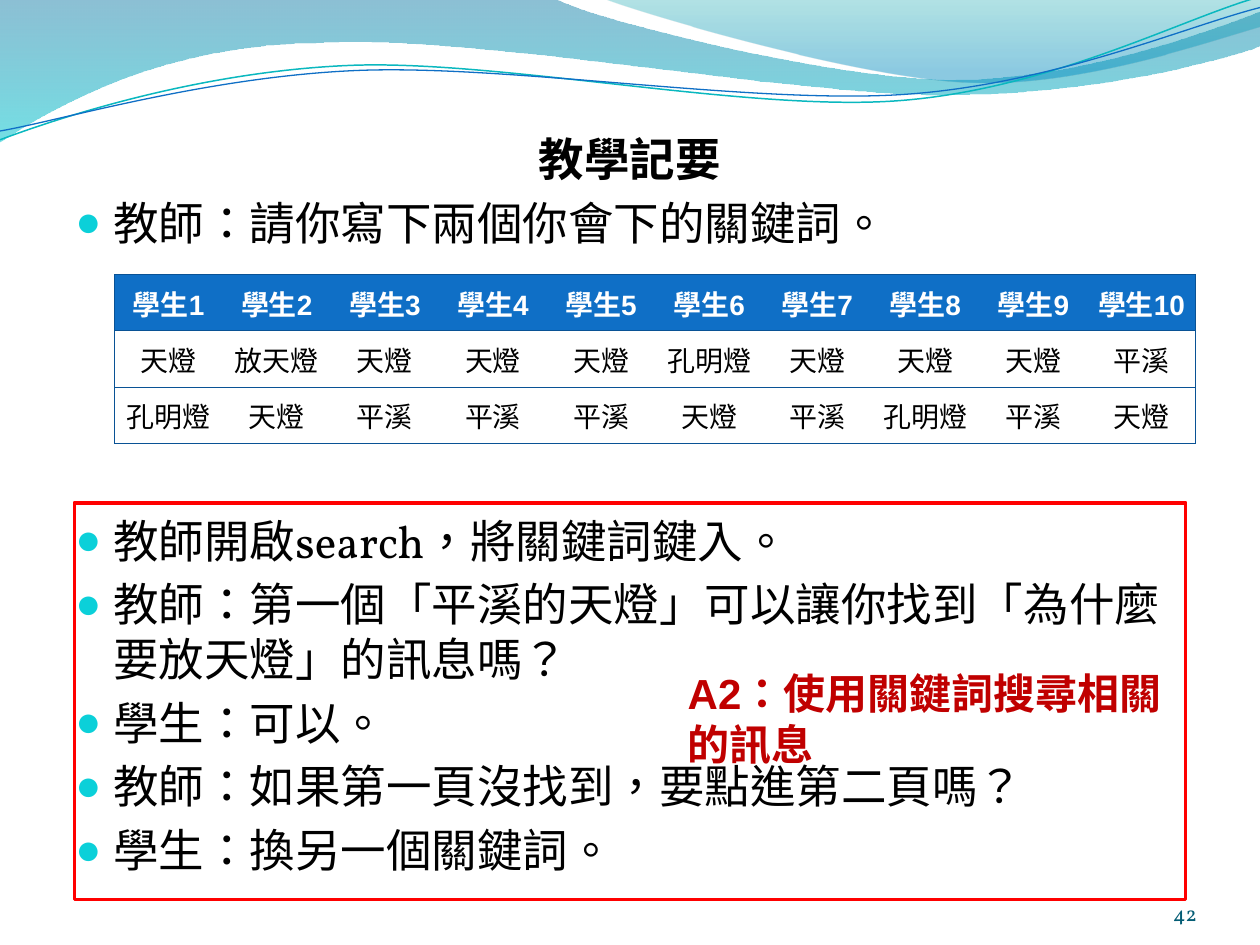
from lxml.etree import SubElement
from pptx import Presentation
from pptx.dml.color import RGBColor
from pptx.enum.shapes import MSO_SHAPE as Shape
from pptx.enum.text import MSO_ANCHOR as Anchor, PP_ALIGN as Align
from pptx.oxml.ns import qn
from pptx.util import Inches, Pt

COLORS = {
    "black": "000000", "white": "FFFFFF", "header": "0F6FC6", "border": "095295",
    "bullet": "0BD0D9", "accent": "C00000", "frame": "FF0000", "number": "045D75",
    "deep": "0074A1", "aqua": "00C6CF", "teal": "00A1A9", "sky": "008BBF",
    "cyan_line": "0AB8BF", "blue_line": "0F6FC6",
}
PLAIN_TABLE_STYLE = "{2D5ABB26-0587-4C30-8999-92F81FD0307C}"

# Outlines in inches: a pair is a straight point, six numbers are a cubic curve.
LEFT_WAVE = [
    (0, -0.01), (4.4, -0.01), (4.76, 0.17, 6.64, 0.63, 7.58, 0.63),
    (8.53, 0.63, 9.58, 0.26, 10, 0.09), (10.01, 0.36),
    (9.83, 0.44, 8.7, 0.76, 7.46, 0.75), (6.22, 0.75, 3.82, 0.28, 2.57, 0.34),
    (1.29, 0.35, 0.46, 0.83, -0.01, 1.13),
]
RIGHT_WAVE = [
    (4.79, -0.01), (5.09, 0.11, 6.82, 0.62, 7.69, 0.65),
    (8.56, 0.69, 9.61, 0.32, 10, 0.21), (10, 0),
]
CYAN_CURVE = [
    (0, 1.11), (0.48, 0.93, 1.58, 0.57, 2.77, 0.52),
    (3.95, 0.47, 5.93, 0.89, 7.13, 0.8), (8.33, 0.71, 9.38, 0.15, 9.98, -0.02),
]
BLUE_CURVE = [
    (0, 1.04), (0.47, 0.96, 1.64, 0.61, 2.83, 0.56),
    (4.03, 0.51, 5.97, 0.83, 7.17, 0.75), (8.36, 0.67, 9.41, 0.21, 10, 0.06),
]

FIRST_KEYWORDS = ["天燈", "放天燈", "天燈", "天燈", "天燈",
                  "孔明燈", "天燈", "天燈", "天燈", "平溪"]
SECOND_KEYWORDS = ["孔明燈", "天燈", "平溪", "平溪", "平溪",
                   "天燈", "平溪", "孔明燈", "平溪", "天燈"]
STUDENTS = [f"學生{number}" for number in range(1, 11)]

QUESTION = "教師：請你寫下兩個你會下的關鍵詞。"
DIALOGUE = [
    "教師開啟search，將關鍵詞鍵入。",
    "教師：第一個「平溪的天燈」可以讓你找到「為什麼要放天燈」的訊息嗎？",
    "學生：可以。",
    "教師：如果第一頁沒找到，要點進第二頁嗎？",
    "學生：換另一個關鍵詞。",
]


def rgb(name):
    return RGBColor.from_string(COLORS[name])


class SlideBuilder:
    """Holds the slide and the text style shared by its elements."""
    heading_font = "Arial"
    body_font = "Vollkorn"
    body_size = 26

    def __init__(self, slide):
        self.slide = slide

    def run(self, paragraph, text, size, color="black", font=None, bold=False):
        run = paragraph.add_run()
        run.text = text
        run.font.size = Pt(size)
        run.font.name = font or self.body_font
        run.font.bold = bold
        run.font.color.rgb = rgb(color)
        run._r.get_or_add_rPr().set("lang", "zh-TW")

    def outline(self, parts, closed):
        """Lay straight segments through all points, then join threes into curves."""
        points = [(round(part[i] * 100), round(part[i + 1] * 100))
                  for part in parts for i in range(0, len(part), 2)]
        builder = self.slide.shapes.build_freeform(*points[0], scale=Inches(0.01))
        builder.add_line_segments(points[1:], close=closed)
        shape = builder.convert_to_shape()
        shape.shadow.inherit = False
        segments = iter(list(shape._element.iter(qn("a:lnTo"))))
        for part in parts[1:]:
            segment = next(segments)
            if len(part) == 6:
                curve = segment.makeelement(qn("a:cubicBezTo"))
                segment.addprevious(curve)
                for piece in (segment, next(segments), next(segments)):
                    curve.append(piece[0])
                    piece.getparent().remove(piece)
        return shape

    def wave(self, parts, stops):
        """Add a borderless area; stops are (position, colour, opacity) in percent."""
        shape = self.outline(parts, True)
        shape.line.fill.background()
        shape.fill.gradient()
        shape.fill.gradient_angle = 270
        for stop, (position, color, opacity) in zip(shape.fill.gradient_stops, stops):
            stop.position = position / 100
            stop.color.rgb = rgb(color)
        colors = shape._element.spPr.find(qn("a:gradFill")).iter(qn("a:srgbClr"))
        for element, (_, _, opacity) in zip(colors, stops):
            SubElement(element, qn("a:alpha"), val=str(opacity * 1000))

    def curve(self, parts, color, width):
        shape = self.outline(parts, False)
        shape.fill.background()
        shape.line.color.rgb = rgb(color)
        shape.line.width = Pt(width)

    def text_frame(self, left, top, width, height):
        box = self.slide.shapes.add_textbox(
            Inches(left), Inches(top), Inches(width), Inches(height))
        box.text_frame.word_wrap = True
        return box.text_frame

    def bullet(self, paragraph, text):
        properties = paragraph._p.get_or_add_pPr()
        properties.set("marL", str(Inches(0.3)))
        properties.set("indent", str(Inches(-0.3)))
        color = SubElement(properties, qn("a:buClr"))
        SubElement(color, qn("a:srgbClr"), val=COLORS["bullet"])
        SubElement(properties, qn("a:buSzPct"), val="95000")
        SubElement(properties, qn("a:buFont"), typeface=self.heading_font)
        SubElement(properties, qn("a:buChar"), char="●")
        self.run(paragraph, text, self.body_size)

    def bullets(self, frame, texts, first=None):
        """Add bulleted lines, starting in the given paragraph or in a new one."""
        for text in texts:
            paragraph = first or frame.add_paragraph()
            if first is None:
                paragraph.space_before = Pt(self.body_size * 0.2)
            self.bullet(paragraph, text)
            first = None

    def border(self, cell, sides):
        for side in sides:
            line = SubElement(cell._tc.get_or_add_tcPr(), qn(f"a:ln{side}"),
                              w=str(Pt(0.75)))
            fill = SubElement(line, qn("a:solidFill"))
            SubElement(fill, qn("a:srgbClr"), val=COLORS["border"])

    def table(self, rows, left, top, width, height):
        last = len(rows[0]) - 1
        holder = self.slide.shapes.add_table(
            len(rows), last + 1, Inches(left), Inches(top),
            Inches(width), Inches(height))
        table = holder.table
        next(holder._element.iter(qn("a:tableStyleId"))).text = PLAIN_TABLE_STYLE
        for column in table.columns:
            column.width = Inches(width / (last + 1))
        for r, texts in enumerate(rows):
            table.rows[r].height = Inches(height / len(rows))
            header = r == 0
            for c, text in enumerate(texts):
                cell = table.cell(r, c)
                cell.margin_left = cell.margin_right = Inches(0.02)
                cell.margin_top = cell.margin_bottom = 0
                cell.vertical_anchor = Anchor.MIDDLE
                self.border(cell, "L" * (c == 0) + "R" * (c == last) + "TB")
                if header:
                    cell.fill.solid()
                    cell.fill.fore_color.rgb = rgb("header")
                else:
                    cell.fill.background()
                paragraph = cell.text_frame.paragraphs[0]
                paragraph.alignment = Align.CENTER
                self.run(paragraph, text, 16, "white" if header else "black",
                         self.heading_font, header)

    def frame(self, left, top, width, height):
        shape = self.slide.shapes.add_shape(
            Shape.RECTANGLE, Inches(left), Inches(top), Inches(width), Inches(height))
        shape.shadow.inherit = False
        shape.fill.background()
        shape.line.color.rgb = rgb("frame")
        shape.line.width = Pt(2)


def main():
    deck = Presentation()
    deck.slide_width, deck.slide_height = Inches(10), Inches(7.5)
    page = SlideBuilder(deck.slides.add_slide(deck.slide_layouts[6]))

    page.wave(LEFT_WAVE, [(0, "deep", 45), (100, "aqua", 55)])
    page.wave(RIGHT_WAVE, [(0, "teal", 30), (80, "sky", 45)])
    page.curve(CYAN_CURVE, "cyan_line", 0.85)
    page.curve(BLUE_CURVE, "blue_line", 0.75)

    opening = page.text_frame(0.5, 0.99, 9, 1.05)
    title = opening.paragraphs[0]
    title.alignment = Align.CENTER
    page.run(title, "教學記要", page.body_size, font=page.heading_font, bold=True)
    page.bullets(opening, [QUESTION])

    dialogue = page.text_frame(0.5, 4.02, 9, 3.1)
    page.bullets(dialogue, DIALOGUE, dialogue.paragraphs[0])

    page.table([STUDENTS, FIRST_KEYWORDS, SECOND_KEYWORDS], 0.91, 2.18, 8.58, 1.34)

    skill = page.text_frame(5.36, 5.25, 4.25, 0.91)
    page.run(skill.paragraphs[0], "A2：使用關鍵詞搜尋相關的訊息", 24, "accent",
             page.heading_font, True)
    page.frame(0.59, 3.99, 8.82, 3.15)

    footer = page.text_frame(8.67, 6.95, 0.83, 0.4)
    footer.margin_left = footer.margin_right = 0
    footer.margin_top = footer.margin_bottom = 0
    footer.vertical_anchor = Anchor.BOTTOM
    footer.paragraphs[0].alignment = Align.RIGHT
    page.run(footer.paragraphs[0], "42", 12, "number")

    deck.save("out.pptx")


if __name__ == "__main__":
    main()
